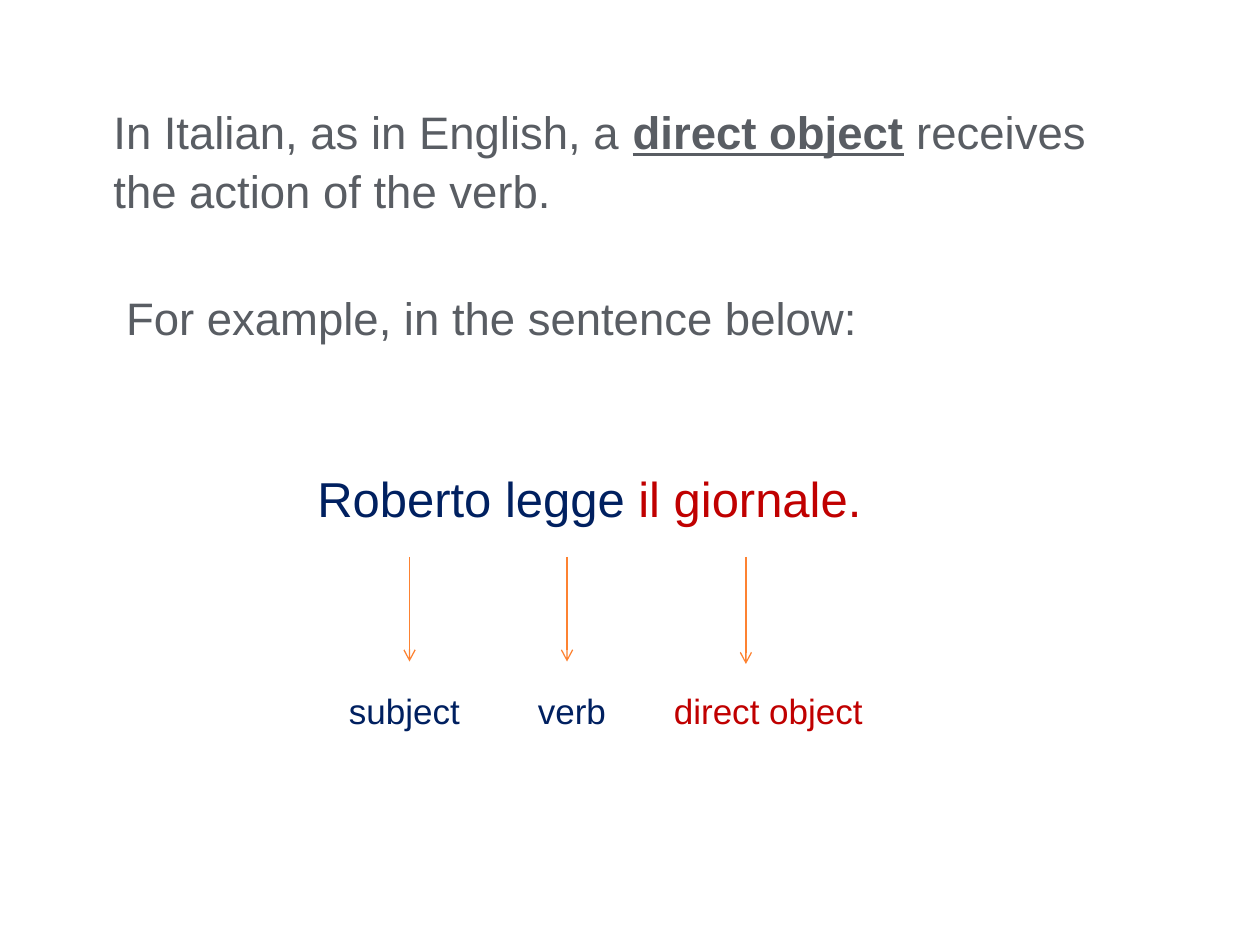
"""Build a slide that explains the direct object in Italian."""
import pptx
import pptx.dml.color
import pptx.enum.shapes
import pptx.enum.text
import pptx.oxml
import pptx.oxml.ns
import pptx.util

Inches = pptx.util.Inches
Pt = pptx.util.Pt
RGBColor = pptx.dml.color.RGBColor

GREY = RGBColor(0x59, 0x5D, 0x63)
NAVY = RGBColor(0x00, 0x20, 0x60)
RED = RGBColor(0xC0, 0x00, 0x00)
ORANGE = RGBColor(0xFD, 0x82, 0x31)
FONT = "Arial"

EXPLANATION = [
    {"indent": 0.3, "before": 0, "spans": [
        ("In Italian, as in English, a ", {}),
        ("direct object", {"bold": True, "underline": True}),
        (" receives the action of the verb.", {}),
    ]},
    {"indent": 0.4, "before": 39, "spans": [
        ("For example, in the sentence below:", {}),
    ]},
]
SENTENCE = [("Roberto legge ", NAVY), ("il giornale.", RED)]
LABELS = [
    ("subject", NAVY, 2.67, 1.25),
    ("verb", NAVY, 4.17, 1.17),
    ("direct object", RED, 5.25, 2),
]
LABEL_TOP = 5.42
ARROW_TOP = 4.42
ARROWS = [(3.25, 5.25), (4.5, 5.25), (5.92, 5.27)]


def add_span(para, text, size, color, styles=None):
    span = para.add_run()
    span.text = text
    font_values = {"name": FONT, "size": Pt(size), **(styles or {})}
    for name, value in font_values.items():
        setattr(span.font, name, value)
    span.font.color.rgb = color


def place(shape, left, top, width, height):
    bounds = {"left": left, "top": top, "width": width, "height": height}
    for name, value in bounds.items():
        setattr(shape, name, Inches(value))


def fill_body(body):
    place(body, 0.5, 0.58, 8.5, 2.5)
    frame = body.text_frame
    frame_values = {
        "word_wrap": True,
        "auto_size": pptx.enum.text.MSO_AUTO_SIZE.NONE,
        "vertical_anchor": pptx.enum.text.MSO_ANCHOR.TOP,
        "margin_top": Inches(0.21),
    }
    for name, value in frame_values.items():
        setattr(frame, name, value)
    for index, content in enumerate(EXPLANATION):
        para = frame.add_paragraph() if index else frame.paragraphs[0]
        para.line_spacing = Pt(33.7)
        para.space_before = Pt(content["before"])
        properties = para._p.get_or_add_pPr()
        properties.set("marL", str(Inches(content["indent"])))
        properties.set("indent", "0")
        properties.append(pptx.oxml.parse_xml(
            f'<a:buNone {pptx.oxml.ns.nsdecls("a")}/>'))
        for text, styles in content["spans"]:
            add_span(para, text, 26, GREY, styles)


def add_text(page, spans, size, left, top, width, height):
    box = page.shapes.add_textbox(*map(Inches, (left, top, width, height)))
    box.text_frame.word_wrap = True
    for text, color in spans:
        add_span(box.text_frame.paragraphs[0], text, size, color)


def add_arrow(page, x, bottom):
    arrow = page.shapes.add_connector(
        pptx.enum.shapes.MSO_CONNECTOR.STRAIGHT,
        *map(Inches, (x, ARROW_TOP, x, bottom)))
    arrow.line.color.rgb = ORANGE
    arrow.line.width = Pt(0.75)
    namespace = pptx.oxml.ns.nsdecls("a")
    arrow.line._get_or_add_ln().append(
        pptx.oxml.parse_xml(f'<a:tailEnd {namespace} type="arrow"/>'))
    arrow._element.spPr.append(
        pptx.oxml.parse_xml(f'<a:effectLst {namespace}/>'))


def main():
    deck = pptx.Presentation()
    deck.slide_width, deck.slide_height = Inches(10), Inches(7.5)
    page = deck.slides.add_slide(deck.slide_layouts[1])
    title = page.shapes.title._element
    title.getparent().remove(title)
    fill_body(page.placeholders[1])
    add_text(page, SENTENCE, 28, 2.42, 3.67, 5.42, 0.57)
    for text, color, left, width in LABELS:
        add_text(page, [(text, color)], 20, left, LABEL_TOP, width, 0.44)
    for x, bottom in ARROWS:
        add_arrow(page, x, bottom)
    deck.save("out.pptx")


if __name__ == "__main__":
    main()
